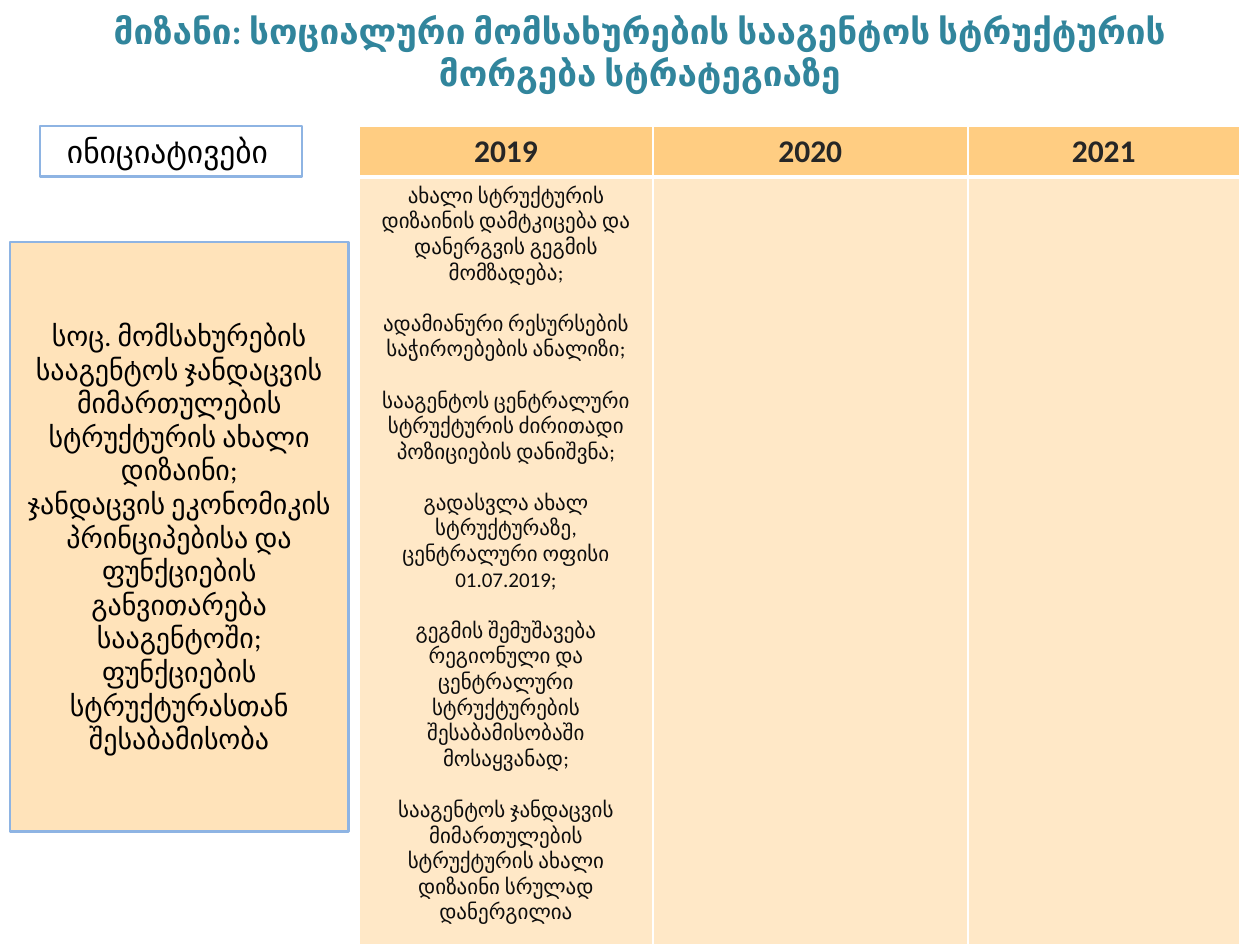
import pptx
import pptx.util
import pptx.dml.color
import pptx.enum.shapes
import pptx.enum.text
import pptx.oxml
import pptx.oxml.ns
from lxml import etree

Cm = pptx.util.Cm
Pt = pptx.util.Pt
qn = pptx.oxml.ns.qn
ALIGN = pptx.enum.text.PP_ALIGN
ANCHOR = pptx.enum.text.MSO_ANCHOR

FONT = "Calibri"
ORANGE = "FF9900"
BLUE = "8EB4E3"
WHITE = "FFFFFF"

TITLE = "მიზანი: სოციალური მომსახურების სააგენტოს სტრუქტურის მორგება სტრატეგიაზე"
YEARS = ["2019", "2020", "2021"]
STEPS_2019 = [
    "ახალი სტრუქტურის დიზაინის დამტკიცება და დანერგვის გეგმის მომზადება;",
    "ადამიანური რესურსების საჭიროებების ანალიზი;",
    "სააგენტოს ცენტრალური სტრუქტურის ძირითადი პოზიციების დანიშვნა;",
    "გადასვლა ახალ სტრუქტურაზე, ცენტრალური ოფისი 01.07.2019;",
    "გეგმის შემუშავება რეგიონული და ცენტრალური სტრუქტურების შესაბამისობაში მოსაყვანად;",
    "სააგენტოს ჯანდაცვის მიმართულების სტრუქტურის ახალი დიზაინი სრულად დანერგილია",
]
INITIATIVES = [
    "სოც. მომსახურების სააგენტოს ჯანდაცვის მიმართულების სტრუქტურის ახალი დიზაინი;",
    "ჯანდაცვის ეკონომიკის პრინციპებისა და ფუნქციების განვითარება სააგენტოში;",
    "ფუნქციების სტრუქტურასთან შესაბამისობა",
]


def rgb(color):
    return pptx.dml.color.RGBColor.from_string(color)


def write(tf, lines, size, color, bold=False, align=ALIGN.CENTER, gap=0):
    tf.text = "\n".join(lines)
    for i, p in enumerate(tf.paragraphs):
        p.alignment = align
        p.space_before = Pt(gap if i else 0)
        for r in p.runs:
            r.font.name = FONT
            r.font.size = Pt(size)
            r.font.bold = bold
            r.font.color.rgb = rgb(color)


def tint(fill, props, color, percent):
    fill.solid()
    fill.fore_color.rgb = rgb(color)
    clr = props.find(qn("a:solidFill")).find(qn("a:srgbClr"))
    etree.SubElement(clr, qn("a:alpha"), val=str(percent * 1000))


def add_title(s):
    sp = s.shapes.title
    sp.left, sp.top, sp.width, sp.height = Cm(1.47), Cm(0.08), Cm(22.86), Cm(1.9)
    sp.text_frame.vertical_anchor = ANCHOR.MIDDLE
    write(sp.text_frame, [TITLE], 20, "31859C", bold=True)


def add_box(s, left, top, width, height):
    sp = s.shapes.add_shape(pptx.enum.shapes.MSO_SHAPE.RECTANGLE,
                            Cm(left), Cm(top), Cm(width), Cm(height))
    sp.shadow.inherit = False
    sp.fill.background()
    sp.line.color.rgb = rgb(BLUE)
    sp.line.width = Pt(1.5)
    sp.text_frame.word_wrap = True
    sp.text_frame.vertical_anchor = ANCHOR.MIDDLE
    return sp


def style_cell(cell, percent, top, bottom):
    tcPr = cell._tc.get_or_add_tcPr()
    for side, width in (("L", 1), ("R", 1), ("T", top), ("B", bottom)):
        ln = etree.SubElement(tcPr, qn("a:ln" + side), w=str(Pt(width)))
        fill = etree.SubElement(ln, qn("a:solidFill"))
        etree.SubElement(fill, qn("a:srgbClr"), val=WHITE)
    tint(cell.fill, tcPr, ORANGE, percent)


def add_plan(s):
    widths = [5.92, 6.35, 5.48]
    heights = [1.02, 15.47]
    table = s.shapes.add_table(2, 3, Cm(7.24), Cm(2.54),
                               Cm(sum(widths)), Cm(sum(heights))).table
    for row, height in zip(table.rows, heights):
        row.height = Cm(height)
    for i, (year, width) in enumerate(zip(YEARS, widths)):
        table.columns[i].width = Cm(width)
        head, body = table.cell(0, i), table.cell(1, i)
        style_cell(head, 49, 1, 3)
        style_cell(body, 22, 3, 1)
        write(head.text_frame, [year], 18, "262626", bold=True)
    write(table.cell(1, 0).text_frame, STEPS_2019, 12, "0D0D0D", gap=14.6)


def main():
    prs = pptx.Presentation()
    prs.slide_width, prs.slide_height = Cm(25.4), Cm(19.05)
    s = prs.slides.add_slide(prs.slide_layouts[5])
    add_title(s)
    label = add_box(s, 0.81, 2.54, 5.28, 1.02)
    label.text_frame.margin_left = Cm(0.54)
    write(label.text_frame, ["ინიციატივები"], 18, "000000", align=ALIGN.LEFT)
    add_plan(s)
    box = add_box(s, 0.2, 4.88, 6.83, 11.89)
    tint(box.fill, box._element.spPr, ORANGE, 27)
    write(box.text_frame, INITIATIVES, 16, "000000")
    prs.save("out.pptx")


if __name__ == "__main__":
    main()
